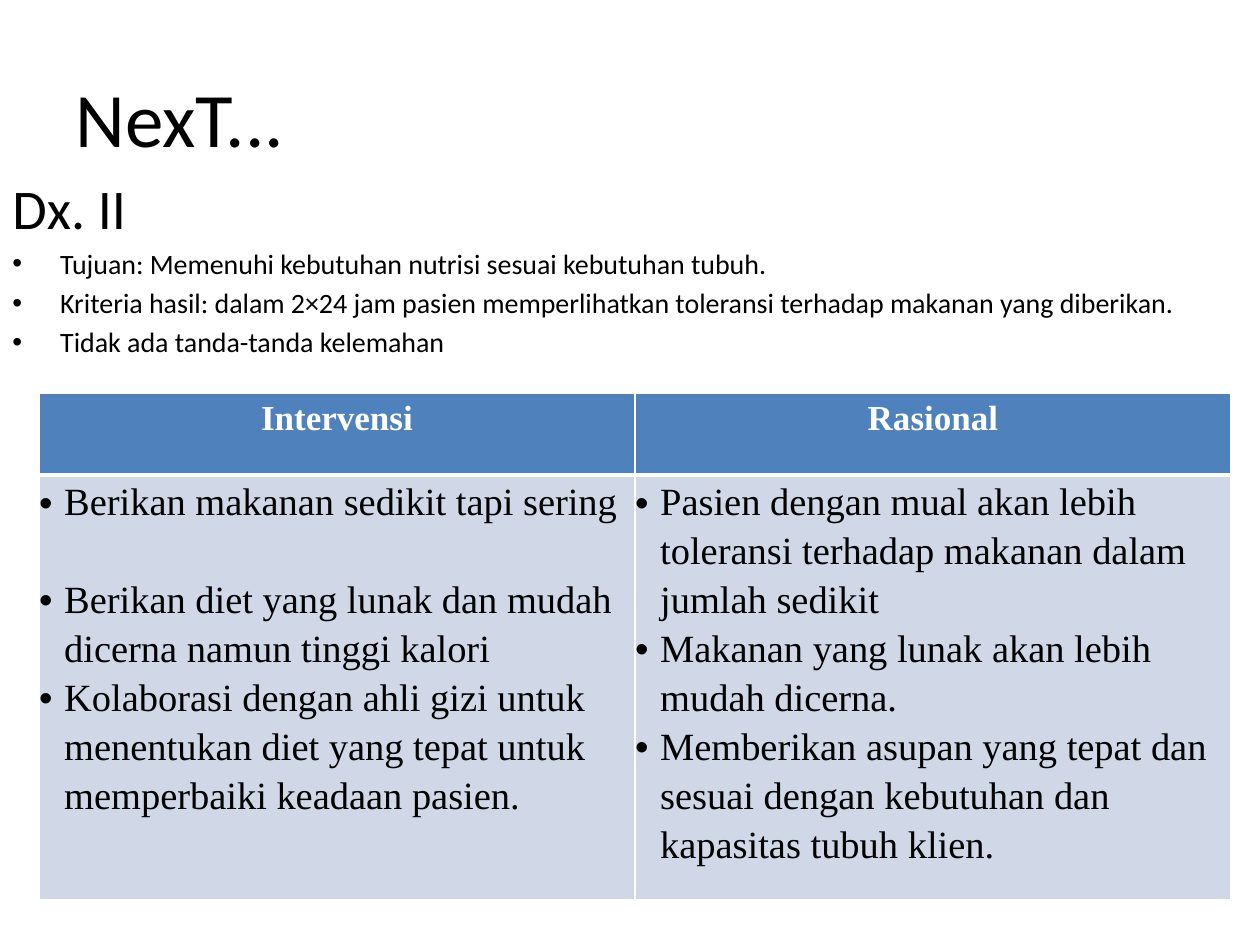
import pptx
import pptx.util
import pptx.dml.color
import pptx.enum.text
import pptx.oxml
import pptx.oxml.ns

Inches = pptx.util.Inches
Pt = pptx.util.Pt
ALIGN = pptx.enum.text.PP_ALIGN
ANCHOR = pptx.enum.text.MSO_ANCHOR

COLORS = {"text": "000000", "white": "FFFFFF", "header": "4F81BD", "body": "D0D8E8"}
BODY_FONT = "Calibri"
TABLE_FONT = "Times New Roman"

GOALS = [
    "Tujuan: Memenuhi kebutuhan nutrisi sesuai kebutuhan tubuh.",
    "Kriteria hasil: dalam 2×24 jam pasien memperlihatkan toleransi terhadap makanan yang diberikan.",
    "Tidak ada tanda-tanda kelemahan",
]
# Each column: heading, then bullets with the space after them in points
COLUMNS = [
    ("Intervensi", [
        ("Berikan makanan sedikit tapi sering", 28),
        ("Berikan diet yang lunak dan mudah dicerna namun tinggi kalori", 0),
        ("Kolaborasi dengan ahli gizi untuk menentukan diet yang tepat untuk "
         "memperbaiki keadaan pasien.", 0),
    ]),
    ("Rasional", [
        ("Pasien dengan mual akan lebih toleransi terhadap makanan dalam jumlah sedikit", 0),
        ("Makanan yang lunak akan lebih mudah dicerna.", 0),
        ("Memberikan asupan yang tepat dan sesuai dengan kebutuhan dan kapasitas "
         "tubuh klien.", 0),
    ]),
]


def rgb(name):
    return pptx.dml.color.RGBColor.from_string(COLORS[name])


def xml(tag, **attributes):
    element = pptx.oxml.parse_xml(f"<a:{tag} {pptx.oxml.ns.nsdecls('a')}/>")
    for key, value in attributes.items():
        element.set(key, str(value))
    return element


def write(frame, text, size, font=BODY_FONT, color="text", bold=False, align=ALIGN.LEFT,
          line=1.0, before=0, after=0, indent=0, bullet=False):
    """Fill the frame's empty first paragraph, or add a new one."""
    para = frame.paragraphs[0]
    if para.runs:
        para = frame.add_paragraph()
    para.alignment = align
    para.line_spacing = line
    para.space_before = Pt(before)
    para.space_after = Pt(after)
    properties = para._p.get_or_add_pPr()
    properties.set("marL", str(Inches(indent)))
    properties.set("indent", str(-Inches(indent)))
    if bullet:
        properties.append(xml("buFont", typeface="Arial"))
        properties.append(xml("buChar", char="•"))
    else:
        properties.append(xml("buNone"))
    span = para.add_run()
    span.text = text
    span.font.size = Pt(size)
    span.font.name = font
    span.font.bold = bold
    span.font.color.rgb = rgb(color)


def set_borders(cell, top=1, bottom=1):
    properties = cell._tc.get_or_add_tcPr()
    widths = {"lnL": 1, "lnR": 1, "lnT": top, "lnB": bottom}
    for index, (tag, width) in enumerate(widths.items()):
        border = xml(tag, w=Pt(width))
        fill = xml("solidFill")
        fill.append(xml("srgbClr", val=COLORS["white"]))
        border.append(fill)
        properties.insert(index, border)


def style_cell(cell, fill, **borders):
    cell.margin_left = cell.margin_right = cell.margin_top = cell.margin_bottom = 0
    cell.fill.solid()
    cell.fill.fore_color.rgb = rgb(fill)
    set_borders(cell, **borders)


def add_title(page):
    title = page.shapes.title
    title.left, title.top = Inches(0.5), Inches(0.3)
    title.width, title.height = Inches(9), Inches(1.25)
    title.text_frame.vertical_anchor = ANCHOR.MIDDLE
    write(title.text_frame, "NexT...", 44)


def add_goals(page):
    box = page.shapes.add_textbox(Inches(0), Inches(1.33), Inches(10), Inches(1.7))
    frame = box.text_frame
    frame.word_wrap = True
    write(frame, "Dx. II", 32, before=6.4, indent=0.38)
    for goal in GOALS:
        write(frame, goal, 16, before=3.2, indent=0.38, bullet=True)


def add_plan_table(page):
    table = page.shapes.add_table(2, len(COLUMNS), Inches(0.31), Inches(3.12),
                                  Inches(9.46), Inches(3.83)).table
    table.rows[0].height = Inches(0.65)
    table.rows[1].height = Inches(3.18)
    for index, (heading, items) in enumerate(COLUMNS):
        table.columns[index].width = Inches(4.73)
        header, body = table.cell(0, index), table.cell(1, index)
        style_cell(header, "header", bottom=3)
        style_cell(body, "body", top=3)
        write(header.text_frame, heading, 20, font=TABLE_FONT, color="white", bold=True,
              align=ALIGN.CENTER, line=1.15, after=10)
        for item, after in items:
            write(body.text_frame, item, 22, font=TABLE_FONT, line=1.15, after=after,
                  indent=0.2, bullet=True)


def main():
    deck = pptx.Presentation()
    deck.slide_width, deck.slide_height = Inches(10), Inches(7.5)
    page = deck.slides.add_slide(deck.slide_layouts[5])
    add_title(page)
    add_goals(page)
    add_plan_table(page)
    deck.save("out.pptx")


if __name__ == "__main__":
    main()
